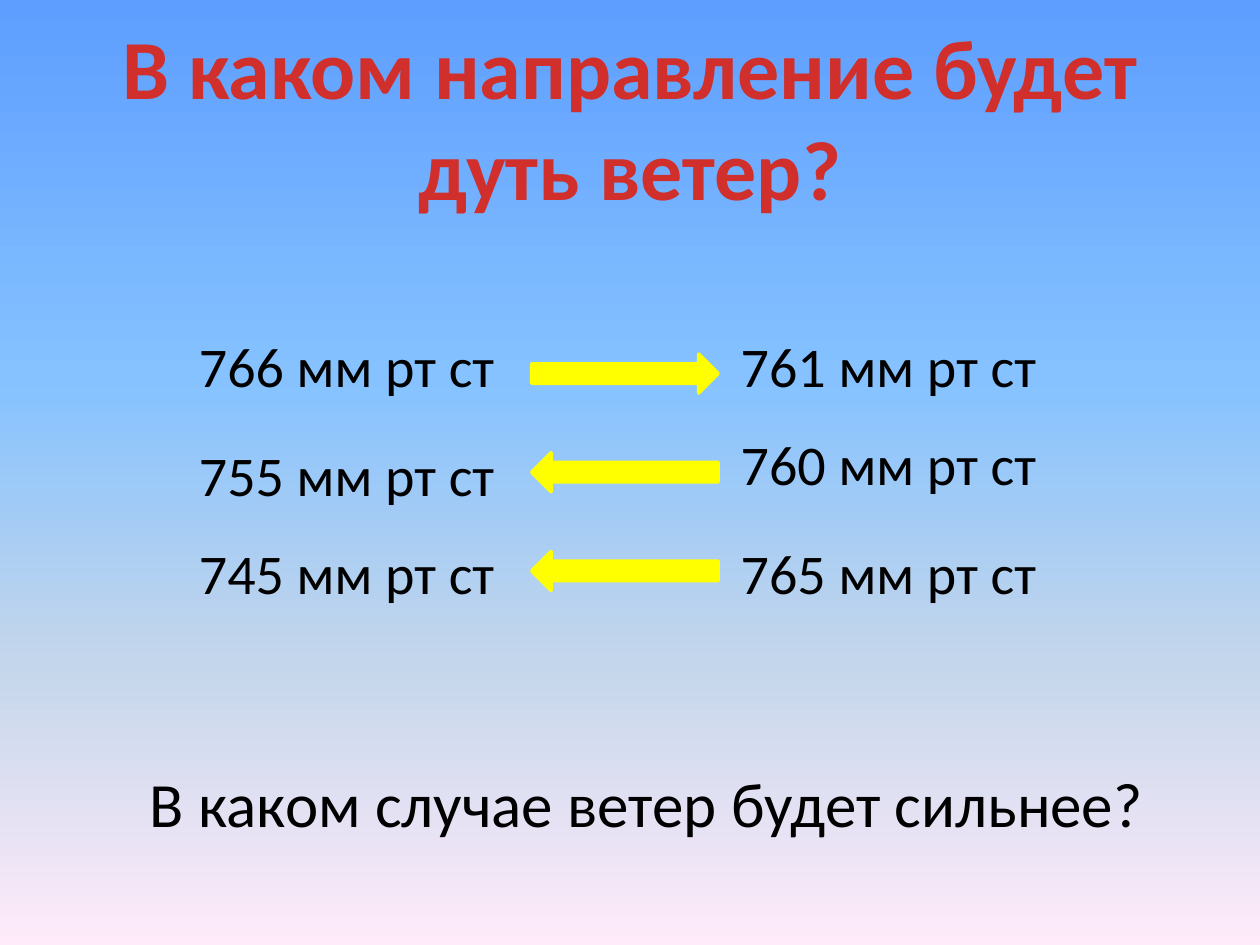
from pptx import Presentation
from pptx.dml.color import RGBColor
from pptx.enum.shapes import MSO_SHAPE
from pptx.enum.text import MSO_ANCHOR, MSO_AUTO_SIZE, PP_ALIGN
from pptx.oxml.ns import qn
from pptx.util import Pt
from lxml.etree import SubElement

HUES = {"text": "000000", "arrow": "FFFF00"}
FADES = {
    "sky": {0: "5E9EFF", 40: "85C2FF", 70: "C4D6EB", 100: "FFEBFA"},
    "title": {0: "FC7C7A", 75: "D02F2C", 100: "C70500"},
}
RIGHT, LEFT = MSO_SHAPE.RIGHT_ARROW, MSO_SHAPE.LEFT_ARROW

# left value, its top, right value, its top, arrow
ROWS = [
    (766, 185.9, 761, 185.9, RIGHT),
    (755, 247.9, 760, 241.9, LEFT),
    (745, 303.9, 765, 303.9, LEFT),
]


def fade(fill, root, stops):
    """Give fill, held in the XML element root, a downward gradient."""
    fill.gradient()
    fill.gradient_angle = 270
    items = next(root.iter(qn("a:gsLst")))
    for old in list(items):
        items.remove(old)
    for pos, hue in stops.items():
        stop = SubElement(items, qn("a:gs"), pos=str(pos * 1000))
        SubElement(stop, qn("a:srgbClr"), val=hue)


def add_text(slide, text, left, top, width, height, size):
    box = slide.shapes.add_textbox(Pt(left), Pt(top), Pt(width), Pt(height))
    frame = box.text_frame
    frame.text = text
    frame.word_wrap = False
    frame.auto_size = MSO_AUTO_SIZE.SHAPE_TO_FIT_TEXT
    font = frame.paragraphs[0].runs[0].font
    font.name = "Calibri"
    font.size = Pt(size)
    font.color.rgb = RGBColor.from_string(HUES["text"])
    return frame


def add_title(slide, text):
    frame = add_text(slide, text, 36, 21.6, 648, 90, 48)
    frame.word_wrap = True
    frame.auto_size = MSO_AUTO_SIZE.NONE
    frame.vertical_anchor = MSO_ANCHOR.MIDDLE
    para = frame.paragraphs[0]
    para.alignment = PP_ALIGN.CENTER
    font = para.runs[0].font
    font.bold = True
    fade(font.fill, para.runs[0]._r, FADES["title"])


def add_arrow(slide, kind, top):
    arrow = slide.shapes.add_shape(kind, Pt(303.8), Pt(top), Pt(106.6), Pt(22.3))
    arrow.shadow.inherit = False
    hue = RGBColor.from_string(HUES["arrow"])
    arrow.fill.solid()
    arrow.fill.fore_color.rgb = hue
    arrow.line.color.rgb = hue
    arrow.line.width = Pt(2)


def main():
    deck = Presentation()
    deck.slide_width, deck.slide_height = Pt(720), Pt(540)
    slide = deck.slides.add_slide(deck.slide_layouts[6])
    fade(slide.background.fill, slide._element, FADES["sky"])
    add_title(slide, "В каком направление будет дуть ветер?")
    for i, (west, wtop, east, etop, kind) in enumerate(ROWS):
        for value, left, top in ((west, 106.6, wtop), (east, 416.2, etop)):
            add_text(slide, f"{value} мм рт ст", left, top, 192.2, 46, 32)
        add_arrow(slide, kind, 202.3 + 56.4 * i)
    add_text(slide, "В каком случае ветер будет сильнее?", 78.5, 433.4, 587.5, 51, 36)
    deck.save("out.pptx")


if __name__ == "__main__":
    main()
